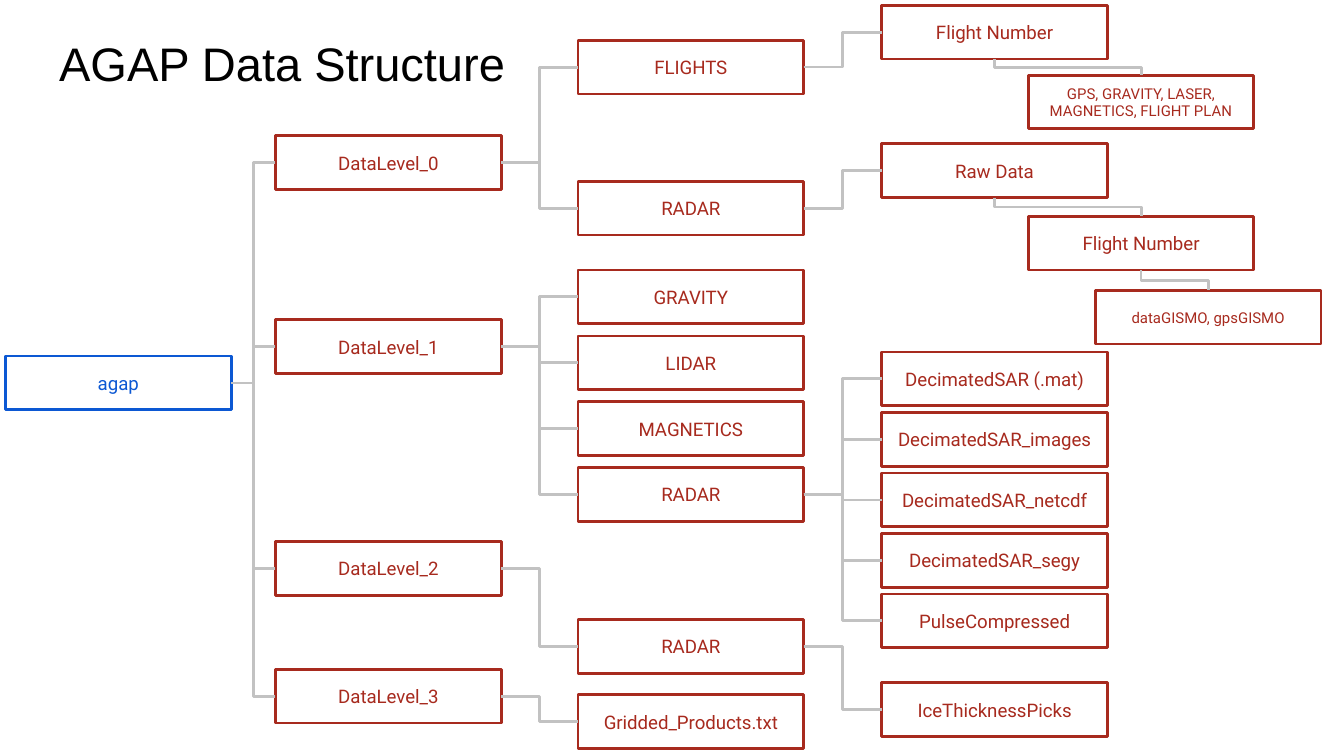
from pptx import Presentation
from pptx.dml.color import RGBColor
from pptx.enum.shapes import MSO_CONNECTOR as CONN, MSO_SHAPE as SHAPE
from pptx.enum.text import MSO_ANCHOR as ANCHOR, MSO_AUTO_SIZE as AUTO, PP_ALIGN as ALIGN
from pptx.oxml.ns import qn
from pptx.util import Inches, Pt

# Content: each node is (label, top, children)
TITLE = "AGAP Data Structure"
PRODUCTS = ["GRAVITY", "LIDAR", "MAGNETICS"]
RADAR_FILES = ["DecimatedSAR (.mat)", "DecimatedSAR_images", "DecimatedSAR_netcdf",
               "DecimatedSAR_segy", "PulseCompressed"]


def stack(labels, top, step):
    return [(label, top + i * step, []) for i, label in enumerate(labels)]


TREE = ("agap", 2.65, [
    ("DataLevel_0", 1.01, [
        ("FLIGHTS", 0.3, [
            ("Flight Number", 0.04, [
                ("GPS, GRAVITY, LASER, MAGNETICS, FLIGHT PLAN", 0.56, [])])]),
        ("RADAR", 1.35, [
            ("Raw Data", 1.07, [
                ("Flight Number", 1.61, [
                    ("dataGISMO, gpsGISMO", 2.16, [])])])])]),
    ("DataLevel_1", 2.38, stack(PRODUCTS, 2.01, 0.49) + [
        ("RADAR", 3.48, stack(RADAR_FILES, 2.62, 0.45))]),
    ("DataLevel_2", 4.03, [
        ("RADAR", 4.61, [("IceThicknessPicks", 5.08, [])])]),
    ("DataLevel_3", 4.98, [("Gridded_Products.txt", 5.17, [])]),
])

# Layout: one left edge per depth; from DOWN_DEPTH on, children hang below
SLIDE_W = Inches(10)
SLIDE_H = SLIDE_W * 9 // 16
LEFTS = [0.04, 2.05, 4.3, 6.56, 7.65, 8.15]
DOWN_DEPTH = 4
BOX_W, BOX_H = 1.68, 0.4
TOP, LEFT, BOTTOM, RIGHT = range(4)  # connection sites of a rectangle
BLUE, RED, GREY, BLACK = "0C58D3", "A72A1E", "C2C2C2", "000000"


def rgb(code):
    return RGBColor.from_string(code)


def style_text(tf, size, font, color, align):
    tf.word_wrap = True
    tf.auto_size = AUTO.NONE
    tf.margin_left = tf.margin_right = tf.margin_top = tf.margin_bottom = Inches(0.1)
    p = tf.paragraphs[0]
    p.alignment = align
    f = p.runs[0].font
    f.size, f.name, f.color.rgb = Pt(size), font, rgb(color)


def add_box(s, label, depth, top, size):
    color = RED if depth else BLUE
    sp = s.shapes.add_shape(SHAPE.RECTANGLE, Inches(LEFTS[depth]), Inches(top),
                            Inches(BOX_W), Inches(BOX_H))
    sp.shadow.inherit = False
    sp.fill.background()
    sp.line.color.rgb, sp.line.width = rgb(color), Pt(1.5)
    tf = sp.text_frame
    tf.text = label
    tf.vertical_anchor = ANCHOR.MIDDLE
    style_text(tf, size, "Roboto", color, ALIGN.CENTER)
    return sp


def add_elbow(s, parent, child, down):
    cxn = s.shapes.add_connector(CONN.ELBOW, 0, 0, 0, 0)
    cxn.begin_connect(parent, BOTTOM if down else RIGHT)
    cxn.end_connect(child, TOP if down else LEFT)
    cxn.line.color.rgb, cxn.line.width = rgb(GREY), Pt(1.5)
    spPr = cxn._element.spPr
    spPr.append(spPr.makeelement(qn("a:effectLst"), {}))
    if down:  # turn the elbow about its centre so that it leaves downwards
        w, h = cxn.width, cxn.height
        cxn.left, cxn.top = cxn.left + (w - h) // 2, cxn.top + (h - w) // 2
        cxn.width, cxn.height = h, w
        spPr.xfrm.set("rot", "16200000")
        spPr.xfrm.set("flipH", "1")


def add_branch(s, node, depth=0, parent=None):
    label, top, children = node
    small = depth >= DOWN_DEPTH and not children
    box = add_box(s, label, depth, top, 8 if small else 10)
    if parent is not None:
        add_elbow(s, parent, box, depth >= DOWN_DEPTH)
    for child in children:
        add_branch(s, child, depth + 1, box)


def main():
    prs = Presentation()
    prs.slide_width, prs.slide_height = SLIDE_W, SLIDE_H
    s = prs.slides.add_slide(prs.slide_layouts[5])

    # Title
    title = s.shapes.title
    title.left, title.top = Inches(0.34), Inches(0.16)
    title.width, title.height = Inches(9.32), Inches(0.63)
    title.text_frame.text = TITLE
    title.text_frame.vertical_anchor = ANCHOR.TOP
    style_text(title.text_frame, 25.2, "Arial", BLACK, ALIGN.LEFT)

    # Directory tree
    add_branch(s, TREE)
    prs.save("out.pptx")


if __name__ == "__main__":
    main()
